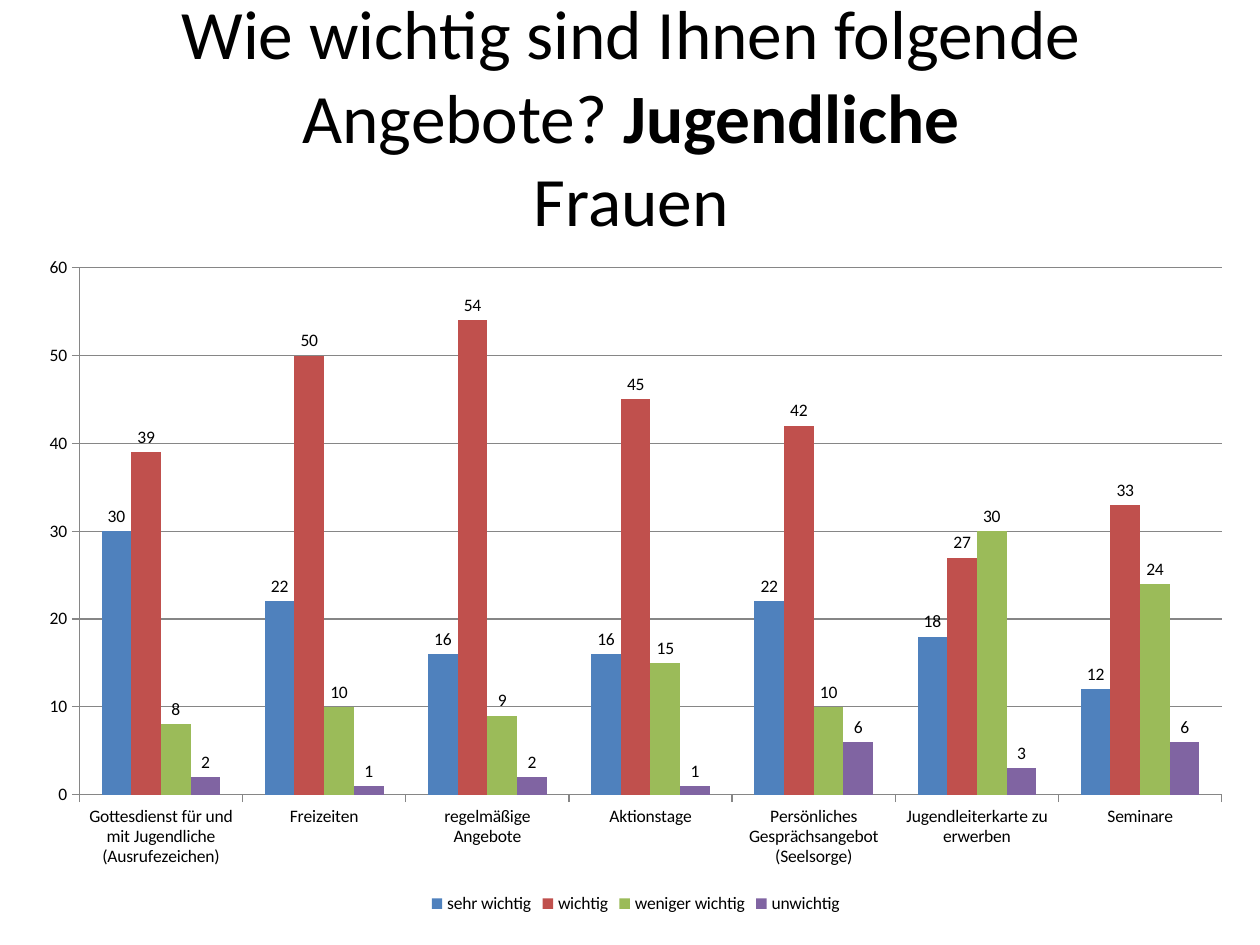
"""Build a slide with a survey title and a clustered column chart."""
from dataclasses import dataclass

from pptx import Presentation
from pptx.chart.axis import _BaseAxis
from pptx.chart.chart import Chart
from pptx.chart.data import CategoryChartData
from pptx.dml.color import RGBColor
from pptx.enum.chart import XL_CHART_TYPE, XL_LABEL_POSITION, XL_LEGEND_POSITION, XL_TICK_MARK
from pptx.enum.text import MSO_ANCHOR, PP_ALIGN
from pptx.slide import Slide
from pptx.util import Inches, Pt

COLUMNS = XL_CHART_TYPE.COLUMN_CLUSTERED
ABOVE_BAR = XL_LABEL_POSITION.OUTSIDE_END
LEGEND_BOTTOM = XL_LEGEND_POSITION.BOTTOM
TICK_OUTSIDE = XL_TICK_MARK.OUTSIDE
MIDDLE = MSO_ANCHOR.MIDDLE
CENTER = PP_ALIGN.CENTER


@dataclass(frozen=True)
class Theme:
    font: str = "Calibri"
    title_size: float = 39.6
    chart_size: float = 10
    text: str = "000000"
    axis: str = "868686"


@dataclass(frozen=True)
class Answer:
    name: str
    color: str
    counts: tuple[int, ...]


THEME = Theme()
OFFERS = (
    "Gottesdienst für und mit Jugendliche (Ausrufezeichen)",
    "Freizeiten",
    "regelmäßige Angebote",
    "Aktionstage",
    "Persönliches Gesprächsangebot (Seelsorge)",
    "Jugendleiterkarte zu erwerben",
    "Seminare",
)
ANSWERS = (
    Answer("sehr wichtig", "4F81BD", (30, 22, 16, 16, 22, 18, 12)),
    Answer("wichtig", "C0504D", (39, 50, 54, 45, 42, 27, 33)),
    Answer("weniger wichtig", "9BBB59", (8, 10, 9, 15, 10, 30, 24)),
    Answer("unwichtig", "8064A2", (2, 1, 2, 1, 6, 3, 6)),
)


def add_title(page: Slide) -> None:
    box = page.shapes.add_textbox(Inches(0.51), Inches(0.29), Inches(9), Inches(1.25))
    frame = box.text_frame
    frame.word_wrap = True
    frame.vertical_anchor = MIDDLE
    para = frame.paragraphs[0]
    para.alignment = CENTER
    para.font.size = Pt(THEME.title_size)
    add_span(para, "Wie wichtig sind Ihnen folgende Angebote? ")
    add_span(para, "Jugendliche", bold=True)
    para.add_line_break()
    add_span(para, "Frauen")


def add_span(para, text: str, bold: bool = False) -> None:
    span = para.add_run()
    span.text = text
    span.font.name = THEME.font
    span.font.size = Pt(THEME.title_size)
    span.font.bold = bold
    span.font.color.rgb = RGBColor.from_string(THEME.text)


def style_line(line) -> None:
    line.color.rgb = RGBColor.from_string(THEME.axis)
    line.width = Pt(0.75)


def style_axis(axis: _BaseAxis) -> None:
    axis.major_tick_mark = TICK_OUTSIDE
    style_line(axis.format.line)


def style_series(chart: Chart) -> None:
    plot = chart.plots[0]
    plot.gap_width = 150
    plot.overlap = 0
    plot.vary_by_categories = False
    for series, answer in zip(plot.series, ANSWERS):
        series.format.fill.solid()
        series.format.fill.fore_color.rgb = RGBColor.from_string(answer.color)
        series.invert_if_negative = False
        labels = series.data_labels
        labels.show_value = True
        labels.position = ABOVE_BAR


def add_survey_chart(page: Slide) -> None:
    survey = CategoryChartData()
    survey.categories = OFFERS
    for answer in ANSWERS:
        survey.add_series(answer.name, answer.counts)
    chart = page.shapes.add_chart(
        COLUMNS, Inches(0.2), Inches(1.94), Inches(9.69), Inches(5.35), survey
    ).chart
    chart.has_title = False
    chart.font.name = THEME.font
    chart.font.size = Pt(THEME.chart_size)
    chart.font.color.rgb = RGBColor.from_string(THEME.text)
    chart.has_legend = True
    chart.legend.position = LEGEND_BOTTOM
    chart.legend.include_in_layout = False
    style_axis(chart.category_axis)
    counts = chart.value_axis
    style_axis(counts)
    counts.minimum_scale, counts.maximum_scale, counts.major_unit = 0, 60, 10
    counts.has_major_gridlines = True
    style_line(counts.major_gridlines.format.line)
    style_series(chart)


def main() -> None:
    deck = Presentation()
    deck.slide_width, deck.slide_height = Inches(10), Inches(7.5)
    page = deck.slides.add_slide(deck.slide_layouts[6])
    add_title(page)
    add_survey_chart(page)
    deck.save("out.pptx")


if __name__ == "__main__":
    main()
